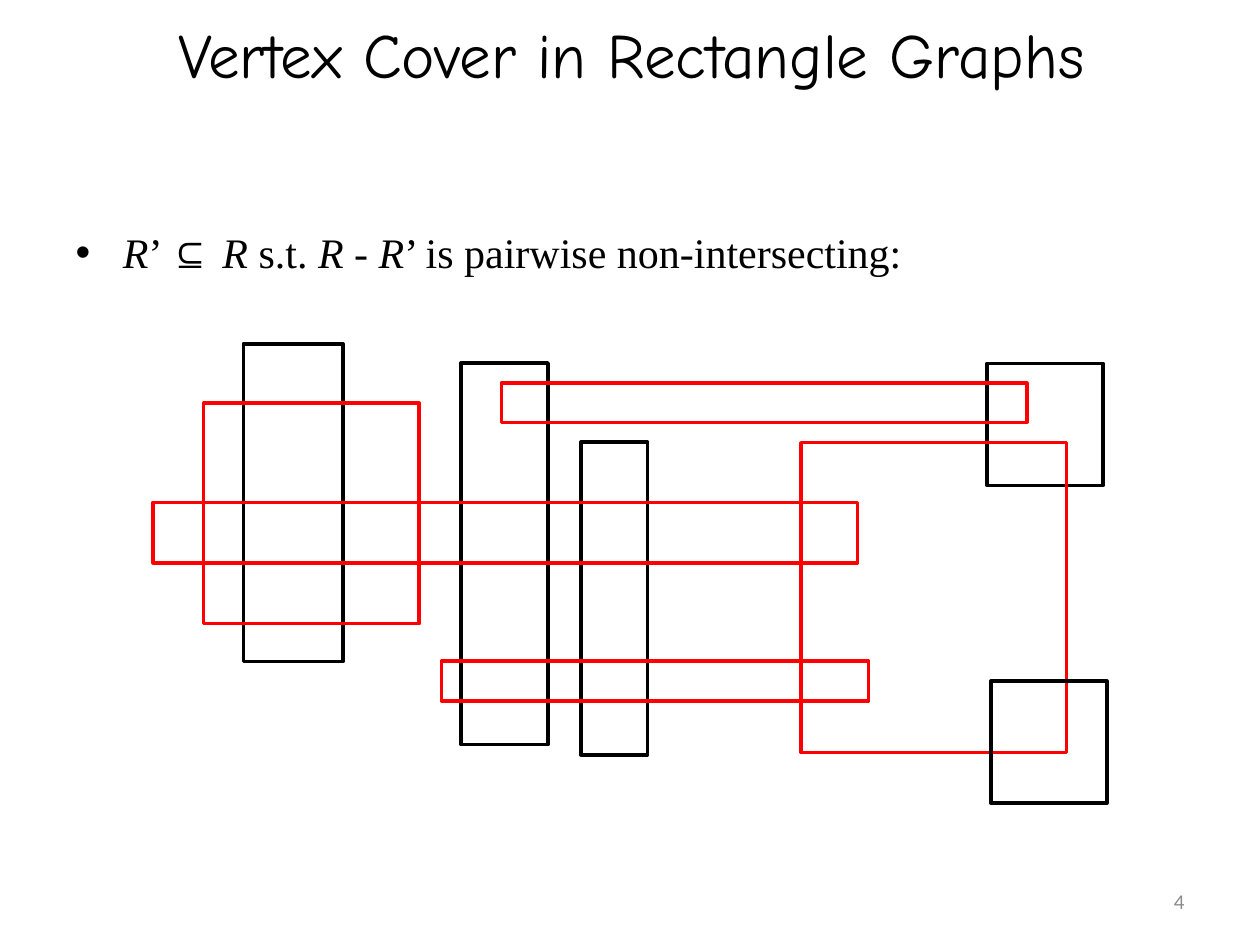
from pptx import Presentation
from pptx import util as u
from pptx.dml import color
from pptx.enum import shapes, text

TITLE = "Vertex Cover in Rectangle Graphs"
STATEMENT = [
    ("R", True), ("’ ⊆ ", False), ("R ", True), ("s.t. ", False),
    ("R", True), (" - ", False), ("R", True),
    ("’ is pairwise non-intersecting:", False),
]
PAGE_NUMBER = "4"
BLACK, RED, GRAY = "000000", "FF0000", "8C8C8C"
RECTANGLES = [
    (139, 196.5, 57, 181.5, BLACK),
    (263.5, 207.4, 49.7, 218.2, BLACK),
    (331.9, 252.7, 38.2, 178.6, BLACK),
    (564, 207.6, 66.3, 69.8, BLACK),
    (87.5, 287, 402.5, 34.6, RED),
    (116.4, 230.4, 123.2, 126, RED),
    (286.5, 219, 300.3, 22.4, RED),
    (457.6, 253, 152, 177, RED),
    (252.3, 377.6, 244, 23, RED),
    (566.2, 389.2, 66.3, 69.8, BLACK),
]


def rgb(value):
    return color.RGBColor.from_string(value)


def place(shape, left, top, width, height):
    shape.left, shape.top = u.Pt(left), u.Pt(top)
    shape.width, shape.height = u.Pt(width), u.Pt(height)


def format_run(run, font, size, ink, italic=False):
    run.font.name = font
    run.font.size = u.Pt(size)
    run.font.italic = italic
    run.font.color.rgb = rgb(ink)


def add_outline(slide, left, top, width, height, ink):
    shape = slide.shapes.add_shape(
        shapes.MSO_SHAPE.RECTANGLE,
        u.Pt(left), u.Pt(top), u.Pt(width), u.Pt(height))
    shape.shadow.inherit = False
    shape.fill.background()
    shape.line.color.rgb = rgb(ink)
    shape.line.width = u.Pt(2)


def add_title(slide):
    title = slide.shapes.title
    place(title, 36.7, 0, 648, 60.5)
    title.text_frame.text = TITLE
    title.text_frame.auto_size = text.MSO_AUTO_SIZE.NONE
    title.text_frame.vertical_anchor = text.MSO_ANCHOR.MIDDLE
    paragraph = title.text_frame.paragraphs[0]
    paragraph.alignment = text.PP_ALIGN.CENTER
    format_run(paragraph.runs[0], "Comic Neue", 36, BLACK)


def add_statement(slide):
    body = slide.placeholders[1]
    place(body, 36, 126, 624, 53.3)
    body.text_frame.auto_size = text.MSO_AUTO_SIZE.NONE
    paragraph = body.text_frame.paragraphs[0]
    properties = paragraph._p.get_or_add_pPr()
    properties.set("marL", str(u.Pt(27)))
    properties.set("indent", str(u.Pt(-27)))
    for words, italic in STATEMENT:
        run = paragraph.add_run()
        run.text = words
        format_run(run, "Times New Roman", 24, BLACK, italic)


def add_page_number(slide):
    box = slide.shapes.add_textbox(
        u.Pt(516), u.Pt(500.5), u.Pt(168), u.Pt(28.75))
    box.text_frame.text = PAGE_NUMBER
    box.text_frame.word_wrap = True
    box.text_frame.vertical_anchor = text.MSO_ANCHOR.MIDDLE
    paragraph = box.text_frame.paragraphs[0]
    paragraph.alignment = text.PP_ALIGN.RIGHT
    format_run(paragraph.runs[0], "Calibri", 12, GRAY)


def main():
    presentation = Presentation()
    presentation.slide_width, presentation.slide_height = u.Pt(720), u.Pt(540)
    slide = presentation.slides.add_slide(presentation.slide_layouts[1])
    add_title(slide)
    add_statement(slide)
    for rectangle in RECTANGLES:
        add_outline(slide, *rectangle)
    add_page_number(slide)
    presentation.save("out.pptx")


if __name__ == "__main__":
    main()
